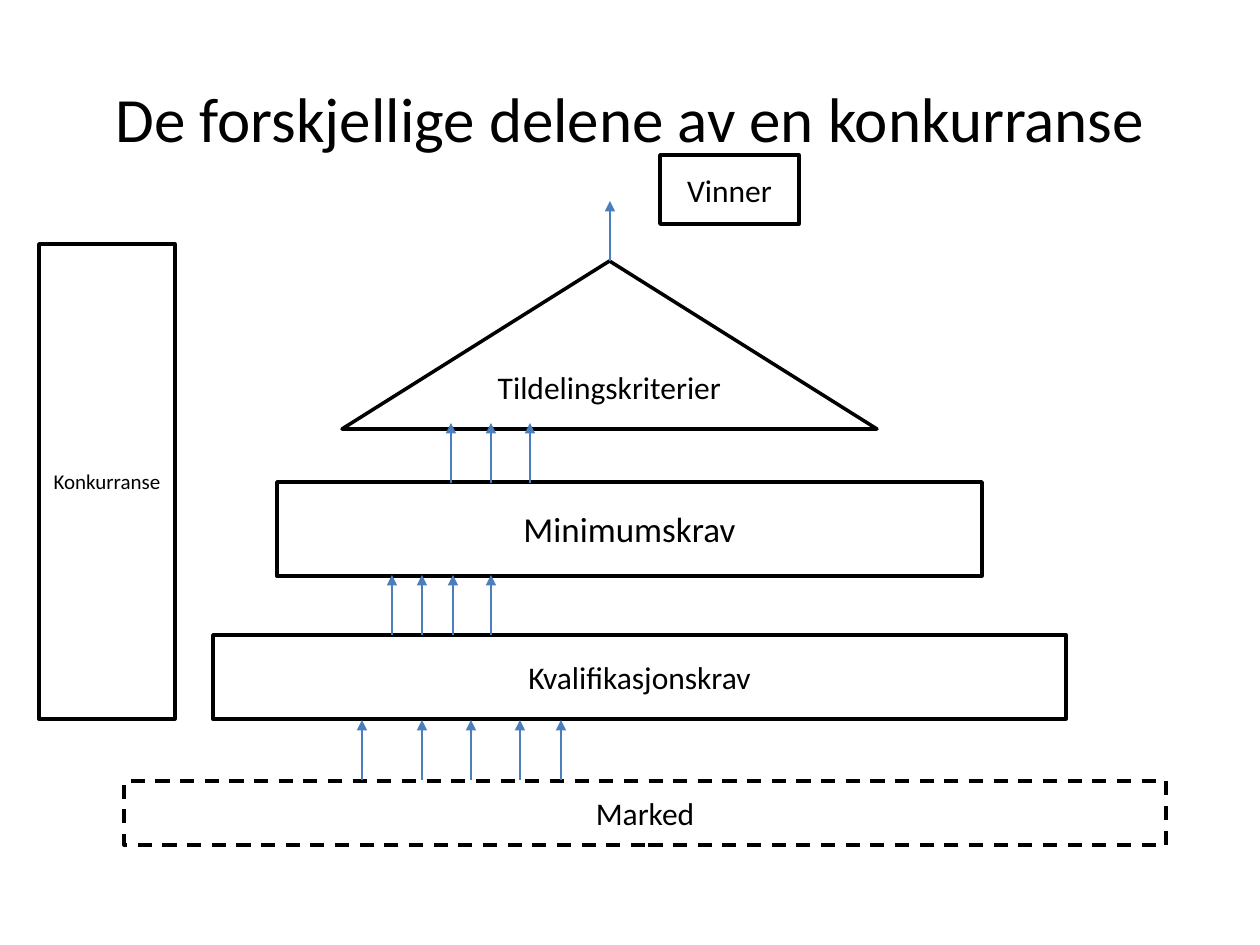
from lxml.etree import SubElement
from pptx import Presentation
from pptx.dml.color import RGBColor
from pptx.enum.dml import MSO_LINE
from pptx.enum.shapes import MSO_CONNECTOR, MSO_SHAPE
from pptx.enum.text import MSO_ANCHOR, PP_ALIGN
from pptx.oxml.ns import qn
from pptx.util import Inches, Pt

PX = Inches(1) // 126
COLORS = {"ink": "000000", "paper": "FFFFFF", "arrow": "4B7EBC"}


def color(name):
    return RGBColor.from_string(COLORS[name])


def write(shape, text, size=18, font="Calibri", ink="ink"):
    """Put one centred paragraph in the middle of a shape."""
    frame = shape.text_frame
    frame.word_wrap = True
    frame.vertical_anchor = MSO_ANCHOR.MIDDLE
    para = frame.paragraphs[0]
    para.alignment = PP_ALIGN.CENTER
    para.space_before = Pt(0)
    span = para.add_run()
    span.text = text
    span.font.size = Pt(size)
    span.font.name = font
    span.font.color.rgb = color(ink)


class Diagram:
    """Holds the page and the style of its boxes and arrows."""

    border = Pt(2)
    arrow_width = Pt(0.75)

    def __init__(self, page):
        self.page = page

    def place(self, shape, left, top, width, height):
        shape.left, shape.top = left * PX, top * PX
        shape.width, shape.height = width * PX, height * PX

    def outline(self, shape, dash=None):
        shape.fill.solid()
        shape.fill.fore_color.rgb = color("paper")
        shape.line.color.rgb = color("ink")
        shape.line.width = self.border
        if dash:
            shape.line.dash_style = dash

    def title(self, text, area):
        title = self.page.shapes.title
        self.place(title, *area)
        write(title, text, size=36)

    def body_box(self, text, area, size):
        body = self.page.placeholders[1]
        self.place(body, *area)
        self.outline(body)
        para = body.text_frame.paragraphs[0]
        properties = para._p.get_or_add_pPr()
        properties.set("marL", "0")
        properties.set("indent", "0")
        SubElement(properties, qn("a:buNone"))
        write(body, text, size=size)

    def box(self, text, area, size=18, kind=MSO_SHAPE.RECTANGLE, dash=None):
        left, top, width, height = (value * PX for value in area)
        box = self.page.shapes.add_shape(kind, left, top, width, height)
        box.shadow.inherit = False
        self.outline(box, dash)
        write(box, text, size=size)

    def arrow_up(self, x, bottom, length=60):
        arrow = self.page.shapes.add_connector(
            MSO_CONNECTOR.STRAIGHT, x * PX, bottom * PX, x * PX, (bottom - length) * PX)
        arrow.line.color.rgb = color("arrow")
        arrow.line.width = self.arrow_width
        SubElement(arrow.line._get_or_add_ln(), qn("a:tailEnd"), type="triangle")
        SubElement(arrow._element.spPr, qn("a:effectLst"))


def main():
    deck = Presentation()
    deck.slide_width, deck.slide_height = Inches(10), Inches(7.5)
    diagram = Diagram(deck.slides.add_slide(deck.slide_layouts[1]))

    diagram.title("De forskjellige delene av en konkurranse", (63, 38, 1134, 158))
    diagram.body_box("Minimumskrav", (277, 482, 705, 94), size=20)
    diagram.box("Kvalifikasjonskrav", (213, 635, 853, 84))
    diagram.box("Marked", (124, 781, 1042, 64), dash=MSO_LINE.DASH)
    diagram.box("Tildelingskriterier", (342, 261, 535, 168),
                kind=MSO_SHAPE.ISOSCELES_TRIANGLE)
    diagram.box("Vinner", (660, 155, 139, 69))
    diagram.box("Konkurranse", (39, 244, 136, 475), size=12)

    arrow_rows = {
        780: (362, 422, 471, 520, 561),
        635: (392, 422, 453, 491),
        483: (451, 491, 530),
        261: (610,),
    }
    for bottom, columns in arrow_rows.items():
        for x in columns:
            diagram.arrow_up(x, bottom)

    deck.save("out.pptx")


if __name__ == "__main__":
    main()
